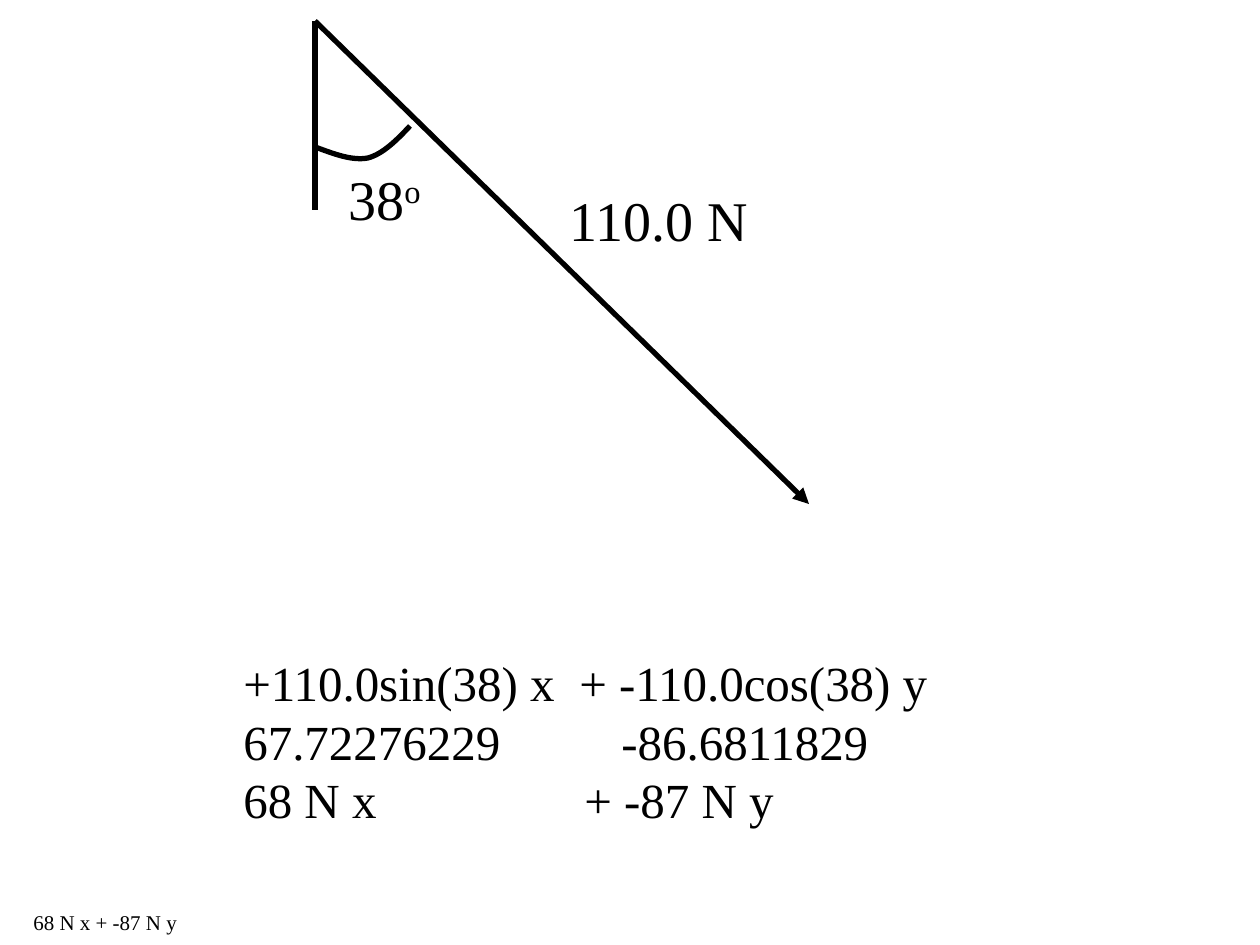
from pptx import Presentation
from pptx.dml.color import RGBColor
from pptx.enum.shapes import MSO_CONNECTOR
from pptx.oxml.ns import qn
from pptx.util import Emu, Pt
from lxml.etree import SubElement

UNIT = 914400 / 126  # EMU in one px


def px(n):
    return Emu(round(n * UNIT))


def rgb(code):
    return RGBColor.from_string(code)


class Sketch:
    """Style and current slide of a vector drawing."""
    font, ink, pen = "Times New Roman", "000000", 3

    def __init__(self, slide):
        self.slide = slide

    def stroke(self, item):
        item.line.color.rgb = rgb(self.ink)
        item.line.width = Pt(self.pen)

    def line(self, start, end, arrow=False):
        item = self.slide.shapes.add_connector(
            MSO_CONNECTOR.STRAIGHT, *map(px, start + end))
        self.stroke(item)
        SubElement(item._element.spPr, qn("a:effectLst"))
        if arrow:
            SubElement(item.line._get_or_add_ln(), qn("a:tailEnd"), type="triangle")

    def curve(self, start, *points):
        """Cubic curve: each three points are two controls and an end."""
        build = self.slide.shapes.build_freeform(*start, scale=UNIT)
        build.add_line_segments(points, close=False)
        item = build.convert_to_shape()
        item.shadow.inherit = False
        item.fill.background()
        self.stroke(item)
        # Join each three straight steps into one Bezier step
        steps = list(item._element.iter(qn("a:lnTo")))
        for i in range(0, len(steps), 3):
            bend = SubElement(steps[i].getparent(), qn("a:cubicBezTo"))
            for step in steps[i:i + 3]:
                bend.append(step[0])
                step.getparent().remove(step)

    def text(self, box, size, *rows):
        """Each row is (runs, tab or None); a run is (text, baseline)."""
        frame = self.slide.shapes.add_textbox(*map(px, box)).text_frame
        frame.word_wrap = any(tab for _, tab in rows)
        for i, (runs, tab) in enumerate(rows):
            para = frame.add_paragraph() if i else frame.paragraphs[0]
            if tab:
                tabs = SubElement(para._p.get_or_add_pPr(), qn("a:tabLst"))
                SubElement(tabs, qn("a:tab"), pos=str(px(tab)), algn="l")
            for words, base in runs:
                run = para.add_run()
                run.text = words
                run.font.name = self.font
                run.font.size = Pt(size)
                run.font.color.rgb = rgb(self.ink)
                if base:
                    run.font._element.set("baseline", str(base * 1000))


def main():
    deck = Presentation()
    deck.slide_width, deck.slide_height = px(1260), px(945)
    art = Sketch(deck.slides.add_slide(deck.slide_layouts[6]))

    # Labels
    art.text((21, 903, 169, 38), 12, ([("68 N x + -87 N y", 0)], None))
    art.text((557, 179, 205, 79), 32, ([("110.0 N", 0)], None))
    art.text((336, 158, 100, 79), 32, ([("38", 0), ("o", 30)], None))

    # Vertical reference, force vector and angle arc
    top = (315, 21)
    art.line(top, (315, 210))
    art.line(top, (809, 504), arrow=True)
    art.curve((315, 147), (334, 154), (352, 161), (368, 158),
              (383, 154), (397, 140), (410, 126))

    # Components, with the y part at a tab stop
    work = [("+110.0sin(38) x\t+ -110.0cos(38) y", 336),
            ("67.72276229\t-86.6811829", 378),
            ("68 N x\t+ -87 N y", 341)]
    art.text((231, 646, 717, 190), 28, *[([(row, 0)], tab) for row, tab in work])

    deck.save("out.pptx")


if __name__ == "__main__":
    main()
